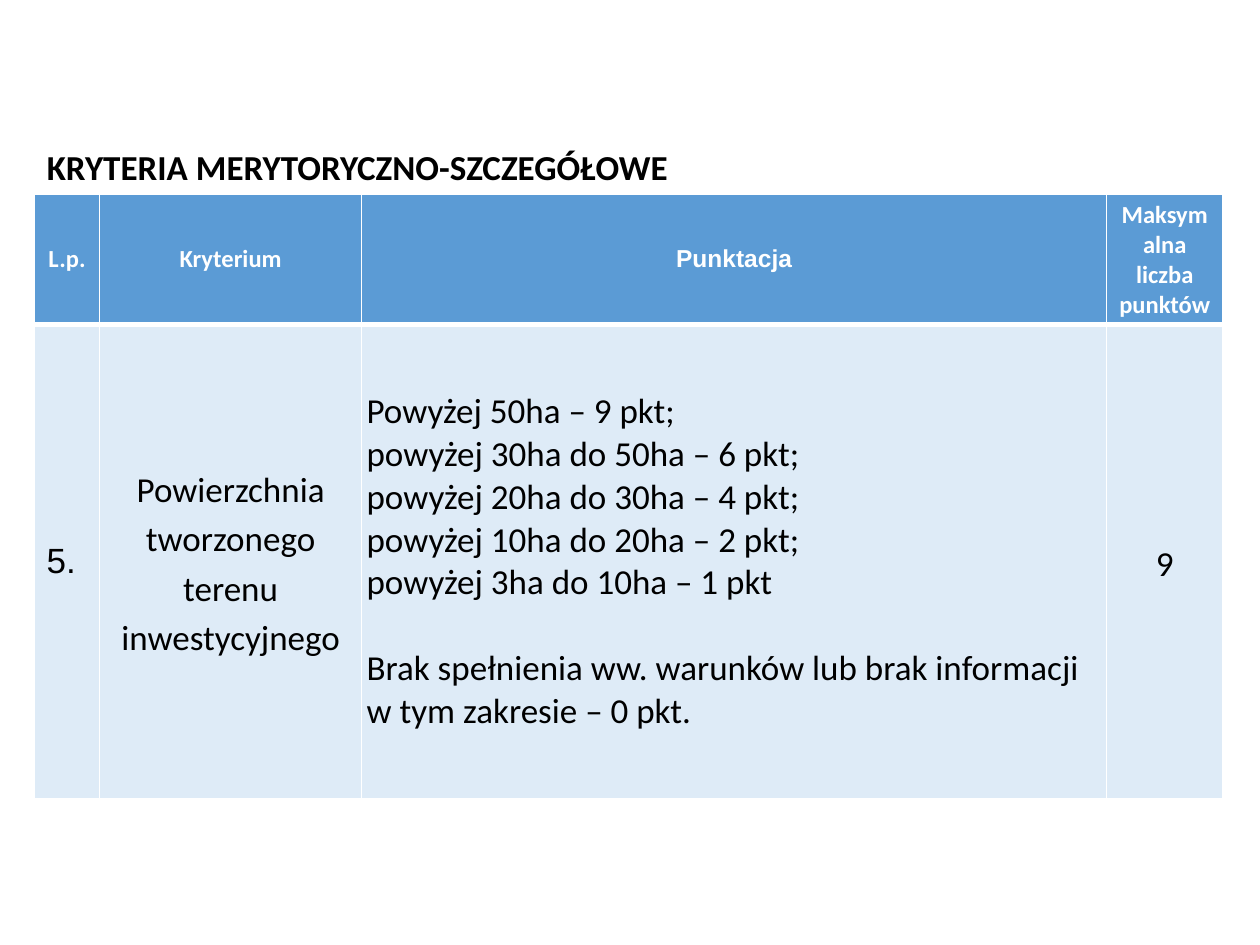
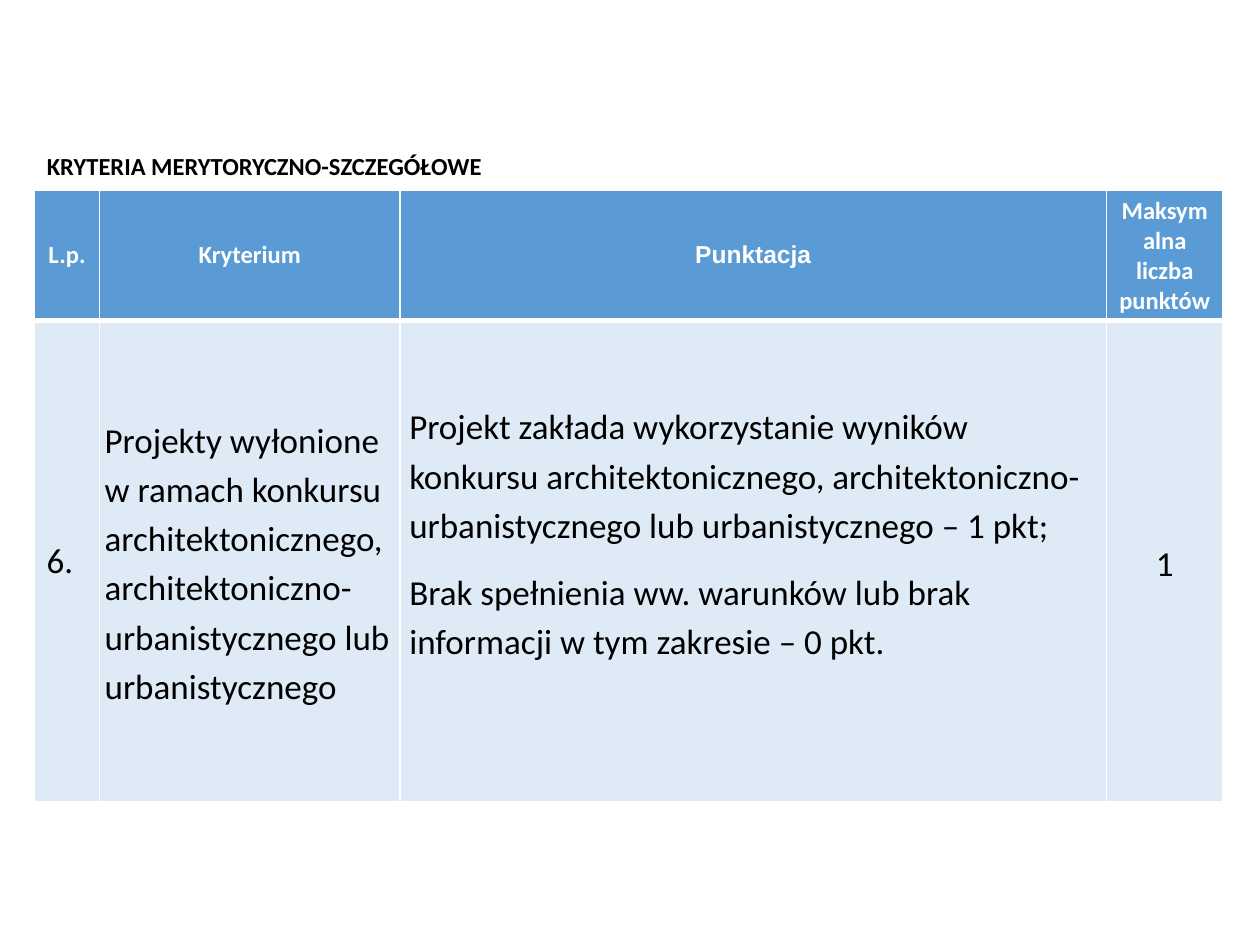
from lxml.etree import SubElement
from pptx import Presentation
from pptx.dml.color import RGBColor
from pptx.enum.text import MSO_ANCHOR, MSO_AUTO_SIZE, PP_ALIGN
from pptx.oxml.ns import qn
from pptx.util import Cm, Pt

WHITE, BLACK, BLUE, PALE = "FFFFFF", "000000", "5B9BD5", "DEEBF7"
LEFT, TABLE_W, NUMBER_W, MAX_W = 0.69, 23.96, 1.32, 2.34
WIDE, NARROW = (0.25, 0.13), (0.1, 0.1)  # side and top/bottom cell margins
HEADERS = [("L.p.", "Calibri"), ("Kryterium", "Calibri"),
           ("Punktacja", "Arial"), ("Maksymalna liczba punktów", "Calibri")]


def add_text(p, text, size, color, bold=False, font="Calibri"):
    r = p.add_run()
    r.text = text
    r.font.name, r.font.size, r.font.bold = font, Pt(size), bold
    r.font.color.rgb = RGBColor.from_string(color)


def style_cell(cell, fill, margins, top, bottom):
    """Give a cell white borders, a fill and margins; top and bottom are border widths."""
    tcPr = cell._tc.get_or_add_tcPr()
    for side, width in (("L", 1), ("R", 1), ("T", top), ("B", bottom)):
        ln = SubElement(tcPr, qn("a:ln" + side), w=str(Pt(width)))
        SubElement(SubElement(ln, qn("a:solidFill")), qn("a:srgbClr"), val=WHITE)
    cell.fill.solid()
    cell.fill.fore_color.rgb = RGBColor.from_string(fill)
    cell.margin_left = cell.margin_right = Cm(margins[0])
    cell.margin_top = cell.margin_bottom = Cm(margins[1])
    cell.vertical_anchor = MSO_ANCHOR.MIDDLE


slides = [
    dict(title_top=2.79, title_size=(13.13, 1.12), title_pt=20,
         table_top=3.91, rows=(2.51, 9.55), criterion_w=5.28,
         number="5.", number_font="Arial",
         criterion="Powierzchnia tworzonego terenu inwestycyjnego",
         criterion_align=PP_ALIGN.CENTER,
         scores=["Powyżej 50ha – 9 pkt;",
                 "powyżej 30ha do 50ha – 6 pkt;",
                 "powyżej 20ha do 30ha – 4 pkt;",
                 "powyżej 10ha do 20ha – 2 pkt;",
                 "powyżej 3ha do 10ha – 1 pkt"],
         score_margins=NARROW, score_top=None, spacing=1, gap=24.4, maximum="9"),
    dict(title_top=2.92, title_size=(9.35, 0.86), title_pt=14,
         table_top=3.83, rows=(2.49, 9.7), criterion_w=6.05,
         number="6.", number_font="Calibri",
         criterion="Projekty wyłonione w ramach konkursu architektonicznego, "
                   "architektoniczno-urbanistycznego lub urbanistycznego",
         criterion_align=PP_ALIGN.LEFT,
         scores=["Projekt zakłada wykorzystanie wyników konkursu architektonicznego, "
                 "architektoniczno-urbanistycznego lub urbanistycznego – 1 pkt;"],
         score_margins=(0.19, 0), score_top=1.6, spacing=1.15, gap=10, maximum="1"),
]
NO_SCORE = "Brak spełnienia ww. warunków lub brak informacji w tym zakresie – 0 pkt."

prs = Presentation()
prs.slide_width, prs.slide_height = Cm(25.4), Cm(19.05)

for d in slides:
    s = prs.slides.add_slide(prs.slide_layouts[5])

    title = s.shapes.title
    title.left, title.top = Cm(LEFT), Cm(d["title_top"])
    title.width, title.height = [Cm(v) for v in d["title_size"]]
    tf = title.text_frame
    tf.word_wrap = False
    tf.auto_size = MSO_AUTO_SIZE.SHAPE_TO_FIT_TEXT
    tf.vertical_anchor = MSO_ANCHOR.MIDDLE
    tf.paragraphs[0].alignment = PP_ALIGN.LEFT
    add_text(tf.paragraphs[0], "KRYTERIA MERYTORYCZNO-SZCZEGÓŁOWE", d["title_pt"], BLACK, True)

    table = s.shapes.add_table(2, 4, Cm(LEFT), Cm(d["table_top"]),
                               Cm(TABLE_W), Cm(sum(d["rows"]))).table
    table.horz_banding = False
    score_w = TABLE_W - NUMBER_W - d["criterion_w"] - MAX_W
    for column, width in zip(table.columns, (NUMBER_W, d["criterion_w"], score_w, MAX_W)):
        column.width = Cm(width)
    for row, height in zip(table.rows, d["rows"]):
        row.height = Cm(height)

    for cell, (text, font) in zip(table.rows[0].cells, HEADERS):
        style_cell(cell, BLUE, WIDE, 1, 3)
        p = cell.text_frame.paragraphs[0]
        p.alignment = PP_ALIGN.CENTER
        add_text(p, text, 14, WHITE, True, font)

    body = [
        ([d["number"]], d["number_font"], PP_ALIGN.LEFT, 1, WIDE),
        ([d["criterion"]], "Calibri", d["criterion_align"], 1.15, NARROW),
        (d["scores"] + [NO_SCORE], "Calibri", PP_ALIGN.LEFT, d["spacing"], d["score_margins"]),
        ([d["maximum"]], "Calibri", PP_ALIGN.CENTER, 1.15, NARROW),
    ]
    for cell, (lines, font, align, spacing, margins) in zip(table.rows[1].cells, body):
        style_cell(cell, PALE, margins, 3, 1)
        tf = cell.text_frame
        for i, text in enumerate(lines):
            p = tf.paragraphs[0] if i == 0 else tf.add_paragraph()
            p.alignment, p.line_spacing = align, spacing
            if text == NO_SCORE:
                p.space_before = Pt(d["gap"])
            add_text(p, text, 20, BLACK, font=font)

    if d["score_top"]:
        score_cell = table.cell(1, 2)
        score_cell.vertical_anchor = MSO_ANCHOR.TOP
        score_cell.margin_top = Cm(d["score_top"])

prs.save("out.pptx")
